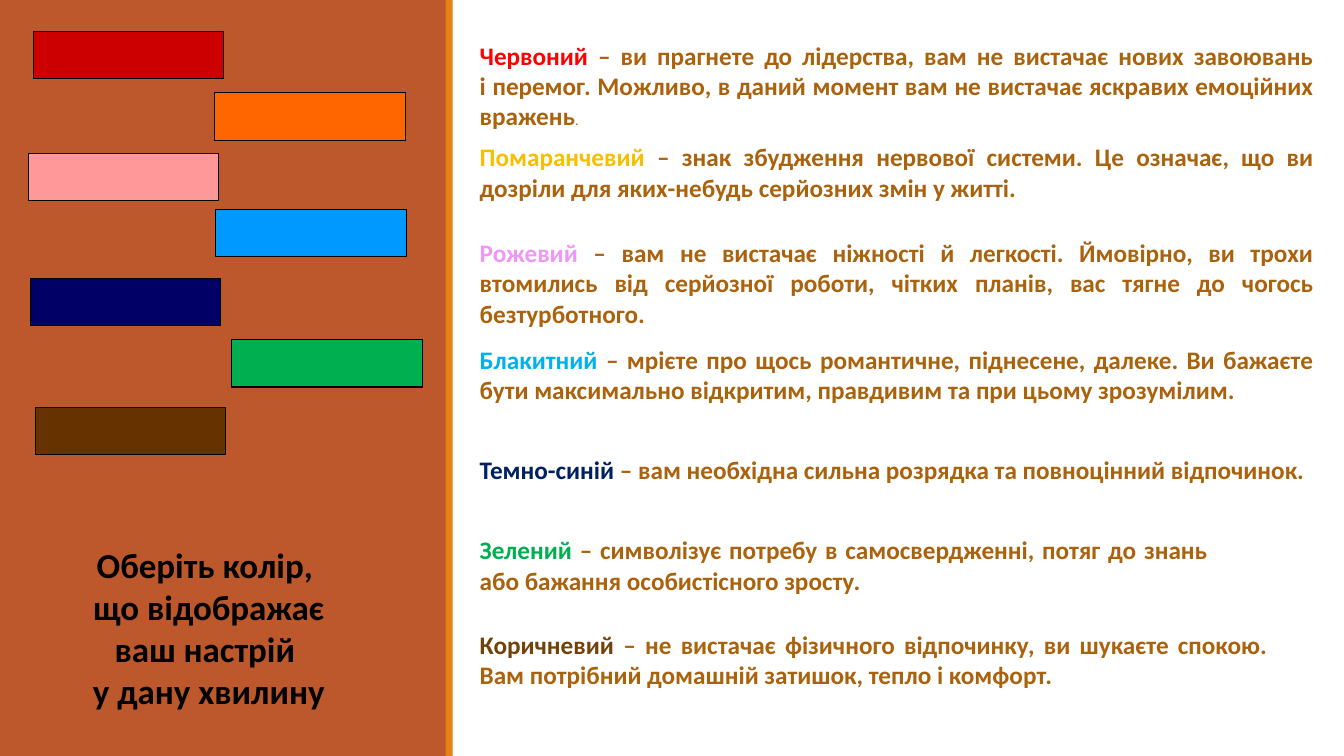
from pptx import Presentation
from pptx.dml.color import RGBColor
from pptx.enum.shapes import MSO_SHAPE
from pptx.enum.text import MSO_ANCHOR, MSO_AUTO_SIZE, PP_ALIGN
from pptx.util import Inches, Pt

COLORS = {
    "panel": "BD582C", "stripe": "E48312", "text": "AB620D", "black": "000000",
    "red": "CC0000", "orange": "FF6600", "pink": "FF9999", "blue": "0099FF",
    "navy": "000066", "green": "00B050", "brown": "663300",
    "red name": "FF0000", "orange name": "FABE00", "pink name": "EE97F7",
    "blue name": "00B0F0", "navy name": "002060", "green name": "00B050",
    "brown name": "724209",
}

# Colour, left and top of each swatch
SWATCHES = [
    ("red", 0.33, 0.31), ("orange", 2.13, 0.92), ("pink", 0.28, 1.52),
    ("blue", 2.14, 2.08), ("navy", 0.3, 2.76), ("green", 2.3, 3.37),
    ("brown", 0.35, 4.04),
]

# Colour, top, height, right inset, name and meaning; \v is a line break
MEANINGS = [
    ("red", 0.34, 1.01, 0.1, "Червоний",
     "ви прагнете до лідерства, вам не вистачає нових завоювань\v"
     "і перемог. Можливо, в даний момент вам не вистачає яскравих емоційних вражень"),
    ("orange", 1.35, 0.71, 0.1, "Помаранчевий",
     "знак збудження нервової системи. Це означає, що ви дозріли "
     "для яких-небудь серйозних змін у житті."),
    ("pink", 2.3, 1.01, 0.1, "Рожевий",
     "вам не вистачає ніжності й легкості. Ймовірно, ви трохи втомились "
     "від серйозної роботи, чітких планів, вас тягне до чогось безтурботного."),
    ("blue", 3.36, 0.71, 0.1, "Блакитний",
     "мрієте про щось романтичне, піднесене, далеке. Ви бажаєте бути "
     "максимально відкритим, правдивим та при цьому зрозумілим."),
    ("navy", 4.46, 0.4, 0.1, "Темно-синій",
     "вам необхідна сильна розрядка та повноцінний відпочинок."),
    ("green", 5.25, 0.71, 1.15, "Зелений",
     "символізує потребу в самосвердженні, потяг до знань "
     "або бажання особистісного зросту."),
    ("brown", 6.19, 0.71, 0.56, "Коричневий",
     "не вистачає фізичного відпочинку, ви шукаєте спокою. "
     "Вам потрібний домашній затишок, тепло і комфорт."),
]

PROMPT = ["Оберіть колір, ", "що відображає", "ваш настрій ", "у дану хвилину"]


def rgb(name):
    return RGBColor.from_string(COLORS[name])


def add_text(p, text, color="text", size=18, bold=True):
    for i, line in enumerate(text.split("\v")):
        if i:
            p.add_line_break()
        r = p.add_run()
        r.text = line
        r.font.name = "Calibri"
        r.font.size = Pt(size)
        r.font.bold = bold
        r.font.color.rgb = rgb(color)


def add_rect(s, color, left, top, width, height, outlined=False):
    sp = s.shapes.add_shape(MSO_SHAPE.RECTANGLE, Inches(left), Inches(top),
                            Inches(width), Inches(height))
    sp.shadow.inherit = False
    sp.fill.solid()
    sp.fill.fore_color.rgb = rgb(color)
    if outlined:
        sp.line.color.rgb = rgb("black")
        sp.line.width = Pt(0.75)
    else:
        sp.line.fill.background()


def add_meaning(s, color, top, height, right_inset, name, meaning):
    sp = s.shapes.add_textbox(Inches(4.66), Inches(top), Inches(8.47), Inches(height))
    tf = sp.text_frame
    tf.word_wrap = True
    tf.auto_size = MSO_AUTO_SIZE.SHAPE_TO_FIT_TEXT
    tf.vertical_anchor = MSO_ANCHOR.MIDDLE
    tf.margin_right = Inches(right_inset)
    p = tf.paragraphs[0]
    p.alignment = PP_ALIGN.LEFT if color == "navy" else PP_ALIGN.JUSTIFY
    add_text(p, f"{name} ", color=f"{color} name")
    add_text(p, f"– {meaning}")
    if color == "red":
        add_text(p, ".", size=10, bold=False)


def set_prompt(title):
    title.left, title.top = Inches(0), Inches(5.34)
    title.width, title.height = Inches(4.14), Inches(1.78)
    tf = title.text_frame
    tf.word_wrap = True
    tf.auto_size = MSO_AUTO_SIZE.SHAPE_TO_FIT_TEXT
    tf.vertical_anchor = MSO_ANCHOR.TOP
    for i, line in enumerate(PROMPT):
        p = tf.add_paragraph() if i else tf.paragraphs[0]
        p.alignment = PP_ALIGN.CENTER
        add_text(p, line, color="black", size=25)
    # Bring the title in front of the side panel
    title.element.getparent().append(title.element)


def main():
    prs = Presentation()
    prs.slide_width, prs.slide_height = Inches(13.33), Inches(7.5)
    s = prs.slides.add_slide(prs.slide_layouts[5])

    # Side panel
    add_rect(s, "panel", 0, 0, 4.43, 7.5)
    add_rect(s, "stripe", 4.42, 0, 0.07, 7.5)

    # Colour swatches
    for color, left, top in SWATCHES:
        add_rect(s, color, left, top, 1.89, 0.47, outlined=True)

    # Meanings of the colours
    for meaning in MEANINGS:
        add_meaning(s, *meaning)

    # Prompt
    set_prompt(s.shapes.title)
    prs.save("out.pptx")


if __name__ == "__main__":
    main()
